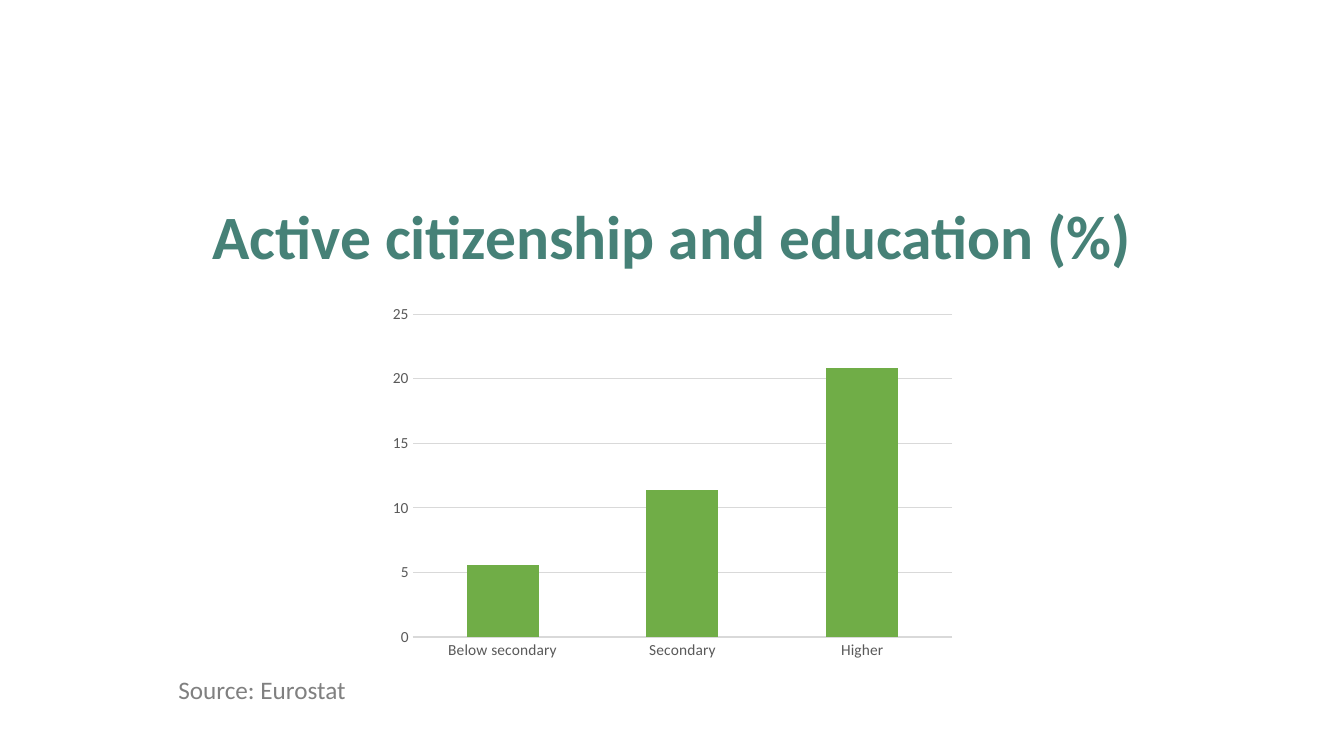
"""Build a slide with a column chart of active citizenship by education."""
from dataclasses import dataclass
from typing import Any

from lxml import etree
from pptx import Presentation
from pptx import util as u
from pptx.chart.data import CategoryChartData
from pptx.dml.color import RGBColor
from pptx.enum import chart as ec
from pptx.enum import text as et

PX = 9144
FONT = "Calibri"
COLORS = {"title": "468177", "source": "808080", "bar": "70AD47",
          "label": "595959", "grid": "D9D9D9"}
VALUES = {"Below secondary": 5.6, "Secondary": 11.4, "Higher": 20.8}


@dataclass
class Label:
    text: str
    box: tuple[int, int, int, int]
    size: int
    color: str
    bold: bool
    align: et.PP_ALIGN
    anchor: et.MSO_ANCHOR


TITLE = Label("Active citizenship and education (%)", (167, 156, 1000, 120), 44,
              "title", True, et.PP_ALIGN.CENTER, et.MSO_ANCHOR.BOTTOM)
SOURCE = Label("Source: Eurostat", (167, 667, 1000, 45), 18,
               "source", False, et.PP_ALIGN.LEFT, et.MSO_ANCHOR.TOP)
CHART_BOX = (378, 295, 578, 367)


def px(*lengths: int) -> list[u.Emu]:
    return [u.Emu(n * PX) for n in lengths]


def rgb(name: str) -> RGBColor:
    return RGBColor.from_string(COLORS[name])


def assign(target: Any, values: dict[str, Any]) -> None:
    for name, value in values.items():
        setattr(target, name, value)


def style_font(font: Any, size: int, color: str, bold: bool = False) -> None:
    assign(font, {"name": FONT, "size": u.Pt(size), "bold": bold})
    font.color.rgb = rgb(color)


def style_line(line: Any) -> None:
    line.color.rgb = rgb("grid")
    line.width = u.Pt(0.75)


def write_label(sp: Any, label: Label) -> None:
    assign(sp, dict(zip(("left", "top", "width", "height"), px(*label.box))))
    tf = sp.text_frame
    assign(tf, {"word_wrap": True, "auto_size": et.MSO_AUTO_SIZE.NONE,
                "vertical_anchor": label.anchor})
    p = tf.paragraphs[0]
    assign(p, {"alignment": label.align, "line_spacing": 0.9})
    r = p.add_run()
    r.text = label.text
    style_font(r.font, label.size, label.color, label.bold)


def add_column_chart(s: Any) -> None:
    data = CategoryChartData(number_format="0.0")
    data.categories = list(VALUES)
    data.add_series("Series 1", list(VALUES.values()))
    chart = s.shapes.add_chart(ec.XL_CHART_TYPE.COLUMN_STACKED,
                               *px(*CHART_BOX), data).chart
    assign(chart, {"has_title": False, "has_legend": False})
    style_font(chart.font, 11, "label")
    plot = chart.plots[0]
    assign(plot, {"gap_width": 150, "overlap": 100, "vary_by_categories": False})
    fill = plot.series[0].format.fill
    fill.solid()
    fill.fore_color.rgb = rgb("bar")
    for axis in (chart.category_axis, chart.value_axis):
        assign(axis, {"major_tick_mark": ec.XL_TICK_MARK.NONE,
                      "minor_tick_mark": ec.XL_TICK_MARK.NONE})
        style_font(axis.tick_labels.font, 11, "label")
    style_line(chart.category_axis.format.line)
    values = chart.value_axis
    assign(values, {"minimum_scale": 0, "maximum_scale": 25, "major_unit": 5,
                    "has_major_gridlines": True})
    assign(values.tick_labels, {"number_format": "0",
                                "number_format_is_linked": False})
    values.format.line.fill.background()
    style_line(values.major_gridlines.format.line)


def main() -> None:
    prs = Presentation()
    prs.slide_width, prs.slide_height = u.Inches(13.33), u.Inches(7.5)
    s = prs.slides.add_slide(prs.slide_layouts.get_by_name("Title Only"))
    write_label(s.shapes.title, TITLE)
    write_label(s.shapes.add_textbox(*px(*SOURCE.box)), SOURCE)
    add_column_chart(s)
    prs.save("out.pptx")


if __name__ == "__main__":
    main()
